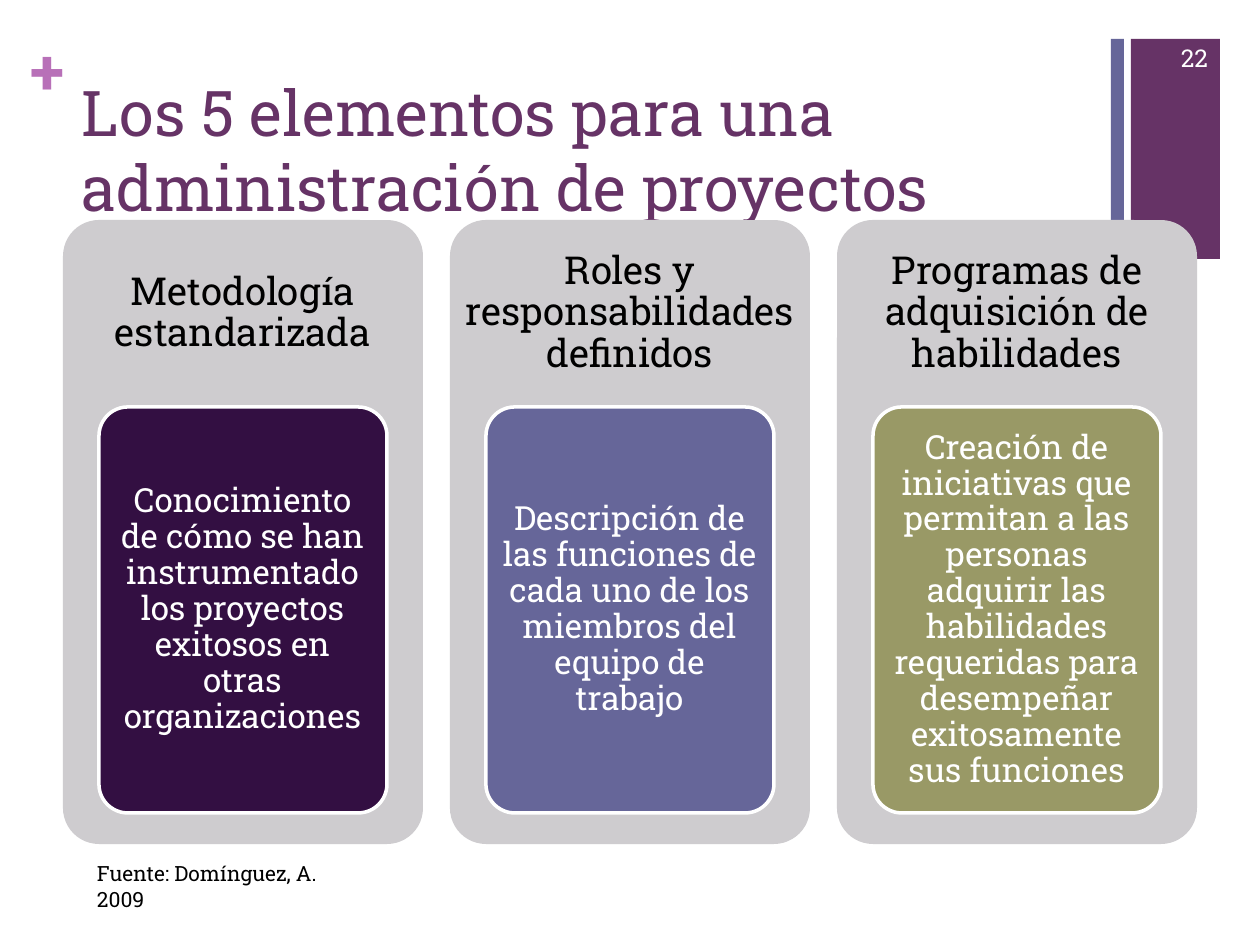
from pptx import Presentation
from pptx import util as u
from pptx.dml import color
from pptx.enum import shapes, text

SCALE = 914400 / 126
FONT = "Roboto Slab"
PURPLE, BLUE, WHITE, BLACK = "663366", "666699", "FFFFFF", "000000"
CARD_LEFT, CARD_TOP, CARD_WIDTH, CARD_PITCH = 63, 220, 360, 387
CARDS = [
    ("Metodología estandarizada", "330F42",
     "Conocimiento de cómo se han instrumentado los proyectos exitosos en "
     "otras organizaciones"),
    ("Roles y responsabilidades definidos", BLUE,
     "Descripción de las funciones de cada uno de los miembros del equipo "
     "de trabajo"),
    ("Programas de adquisición de habilidades", "999966",
     "Creación de iniciativas que permitan a las personas adquirir las "
     "habilidades requeridas para desempeñar exitosamente sus funciones"),
]


def px(*lengths):
    return [u.Emu(round(length * SCALE)) for length in lengths]


def rgb(value):
    return color.RGBColor.from_string(value)


def write(shape, words, size, ink, align=text.PP_ALIGN.LEFT,
          anchor=text.MSO_ANCHOR.TOP, insets=(13, 6), spacing=1.0, bold=False):
    """Put one formatted paragraph into a shape; insets are (sides, top and bottom)."""
    frame = shape.text_frame
    side, end = px(*insets)
    frame_format = {
        "word_wrap": True, "auto_size": text.MSO_AUTO_SIZE.NONE,
        "vertical_anchor": anchor, "margin_left": side, "margin_right": side,
        "margin_top": end, "margin_bottom": end,
    }
    for name, value in frame_format.items():
        setattr(frame, name, value)
    frame.text = words
    paragraph = frame.paragraphs[0]
    paragraph.alignment = align
    paragraph.line_spacing = spacing
    font = paragraph.runs[0].font
    for name, value in {"name": FONT, "size": u.Pt(size), "bold": bold}.items():
        setattr(font, name, value)
    font.color.rgb = rgb(ink)


def add_text(slide, box, words, size, ink, **options):
    write(slide.shapes.add_textbox(*px(*box)), words, size, ink, **options)


def add_block(slide, box, fill, rounded=False, line=None):
    kind = shapes.MSO_SHAPE.ROUNDED_RECTANGLE if rounded else shapes.MSO_SHAPE.RECTANGLE
    shape = slide.shapes.add_shape(kind, *px(*box))
    shape.shadow.inherit = False
    shape.fill.solid()
    shape.fill.fore_color.rgb = rgb(fill)
    if rounded:
        shape.adjustments[0] = 0.1
    if line:
        shape.line.color.rgb = rgb(line)
        shape.line.width = u.Pt(2)
    else:
        shape.line.fill.background()


def add_title(slide, box, words):
    title = slide.shapes.title
    for name, value in zip(("left", "top", "width", "height"), px(*box)):
        setattr(title, name, value)
    write(title, words, 36, PURPLE)


def add_card(slide, left, heading, fill, body):
    centred = {"align": text.PP_ALIGN.CENTER, "anchor": text.MSO_ANCHOR.MIDDLE,
               "spacing": 0.9}
    add_block(slide, (left, CARD_TOP, CARD_WIDTH, 624), "CECCCF", rounded=True)
    add_text(slide, (left, CARD_TOP, CARD_WIDTH, 187), heading, 22, BLACK,
             insets=(11, 11), **centred)
    add_block(slide, (left + 36, 407, 288, 406), fill, rounded=True, line=WHITE)
    add_text(slide, (left + 44, 416, 271, 388), body, 19, WHITE,
             insets=(6, 5), **centred)


def main():
    presentation = Presentation()
    presentation.slide_width, presentation.slide_height = px(1260, 945)
    slide = presentation.slides.add_slide(presentation.slide_layouts[5])

    add_block(slide, (1131, 39, 89, 220), PURPLE)
    add_text(slide, (31, 32, 37, 77), "+", 36, "B870B8", insets=(0, 0), bold=True)
    add_block(slide, (1111, 39, 13, 220), BLUE)
    add_text(slide, (1144, 33, 77, 50), "22", 14, WHITE,
             align=text.PP_ALIGN.RIGHT, anchor=text.MSO_ANCHOR.MIDDLE)
    add_title(slide, (69, 67, 1041, 154),
              "Los 5 elementos para una administración de proyectos")
    for index, card in enumerate(CARDS):
        add_card(slide, CARD_LEFT + index * CARD_PITCH, *card)
    add_text(slide, (84, 855, 268, 38), "Fuente: Domínguez, A. 2009", 12, BLACK)

    presentation.save("out.pptx")


if __name__ == "__main__":
    main()
